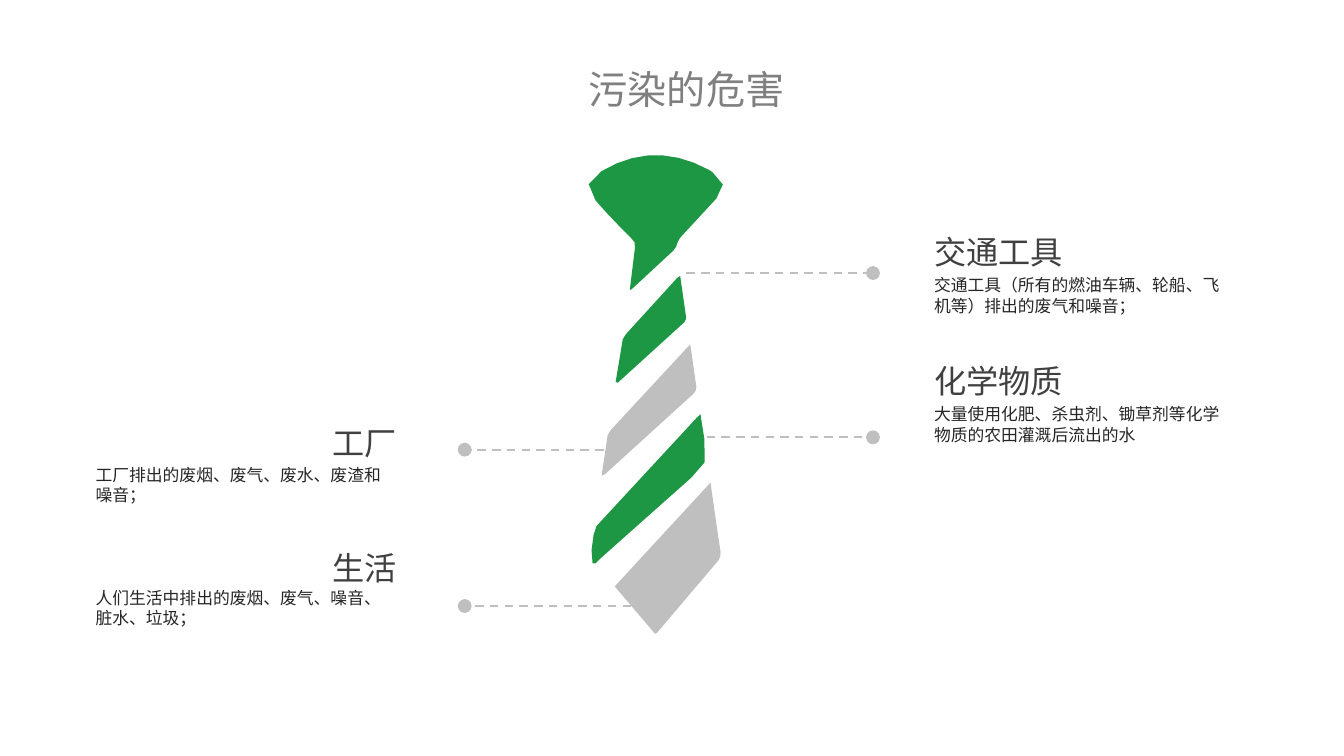
from math import dist

from lxml.etree import SubElement
from pptx import Presentation
from pptx.dml.color import RGBColor
from pptx.enum.dml import MSO_LINE_DASH_STYLE as Dash
from pptx.enum.shapes import MSO_CONNECTOR as Connector
from pptx.enum.text import MSO_ANCHOR as Anchor, MSO_AUTO_SIZE as AutoSize, PP_ALIGN as Align
from pptx.oxml.ns import qn
from pptx.util import Cm, Pt

FONT = "Noto Sans CJK SC"
GREEN = RGBColor(0x1D, 0x97, 0x44)
SILVER = RGBColor(0xBF, 0xBF, 0xBF)
TITLE_GRAY = RGBColor(0x80, 0x80, 0x80)
HEADING_GRAY = RGBColor(0x40, 0x40, 0x40)
BODY_GRAY = RGBColor(0x26, 0x26, 0x26)

UNITS_PER_CM = 100 / 2.54
CURVE_STEP = 15
HEADING_WIDTH, HEADING_HEIGHT = 5.92, 1.24
BODY_WIDTH, BODY_HEIGHT = 8.1, 1.27

TIE_PIECES = [
    (SILVER, [(70, 480), (30, 433), (125, 330), (131, 372), (135, 399),
              (135, 402, 135, 405, 133, 407), (72, 479)]),
    (GREEN, [(45, 139), (50, 98), (51, 93, 50, 90, 46, 87),
             (34, 75, 22, 63, 11, 50), (0, 37, 2, 30, 17, 21),
             (52, 0, 88, 0, 124, 20), (127, 22),
             (139, 31, 141, 37, 131, 48), (95, 87),
             (93, 89, 92, 93, 91, 96), (88, 100), (47, 138)]),
    (GREEN, [(8, 410), (7, 397), (9, 382), (12, 373), (111, 266), (115, 262),
             (119, 287), (119, 290), (126, 306, 117, 315, 106, 325),
             (16, 405), (11, 410)]),
    (SILVER, [(105, 193), (111, 235), (111, 237, 110, 241, 108, 242),
              (20, 322), (17, 323), (23, 283), (26, 278), (102, 196)]),
    (GREEN, [(31, 230), (38, 188), (41, 183), (92, 127), (95, 125),
             (101, 167), (99, 171), (33, 231)]),
]

LEADERS = [
    (15.21, 11.71, 11.33),
    (17.3, 22.0, 6.88),
    (17.81, 22.0, 11.02),
    (15.9, 11.71, 15.27),
]

CALLOUTS = [
    (23.29, 5.72, 1.09, Align.LEFT, "交通工具",
     "交通工具（所有的燃油车辆、轮船、飞机等）排出的废气和噪音；"),
    (23.29, 8.97, 1.09, Align.LEFT, "化学物质",
     "大量使用化肥、杀虫剂、锄草剂等化学物质的农田灌溉后流出的水"),
    (2.16, 10.54, 1.04, Align.RIGHT, "工厂",
     "工厂排出的废烟、废气、废水、废渣和噪音；"),
    (2.16, 13.69, 0.99, Align.RIGHT, "生活",
     "人们生活中排出的废烟、废气、噪音、脏水、垃圾；"),
]


def write_text(shape, text, size, color, align):
    """Fill a shape with one formatted run."""
    frame = shape.text_frame
    frame.word_wrap = True
    frame.auto_size = AutoSize.SHAPE_TO_FIT_TEXT
    frame.vertical_anchor = Anchor.TOP
    paragraph = frame.paragraphs[0]
    paragraph.alignment = align
    paragraph.line_spacing = 1.0
    run = paragraph.add_run()
    run.text = text
    run.font.size = Pt(size)
    run.font.name = FONT
    run.font.color.rgb = color
    SubElement(run.font._element, qn("a:ea"), typeface=FONT)


def add_title(slide, left, top, width, height):
    """Place the slide title in the given box."""
    title = slide.shapes.title
    title.left, title.top = Cm(left), Cm(top)
    title.width, title.height = Cm(width), Cm(height)
    write_text(title, "污染的危害", 28, TITLE_GRAY, Align.CENTER)


def trace_outline(segments):
    """List the points of corners (pairs) and cubic curves (two controls and an end)."""
    points = []
    for *controls, x3, y3 in segments:
        if not controls:
            points.append((x3, y3))
            continue
        x0, y0 = points[-1]
        x1, y1, x2, y2 = controls
        steps = max(2, round(dist((x0, y0), (x3, y3)) / CURVE_STEP))
        for step in range(1, steps + 1):
            t = step / steps
            a, b, c, d = (1 - t) ** 3, 3 * t * (1 - t) ** 2, 3 * t * t * (1 - t), t ** 3
            points.append((a * x0 + b * x1 + c * x2 + d * x3,
                           a * y0 + b * y1 + c * y2 + d * y3))
    return points


def add_tie(slide, left, top):
    """Draw the striped tie from its top left corner."""
    for color, segments in TIE_PIECES:
        points = [(Cm(x / UNITS_PER_CM), Cm(y / UNITS_PER_CM))
                  for x, y in trace_outline(segments)]
        builder = slide.shapes.build_freeform(*points[0])
        builder.add_line_segments(points[1:], close=True)
        shape = builder.convert_to_shape(Cm(left), Cm(top))
        shape.shadow.inherit = False
        shape.fill.solid()
        shape.fill.fore_color.rgb = color
        shape.line.fill.background()


def add_leader(slide, start, end, height):
    """Draw a dashed horizontal line that ends in a dot."""
    leader = slide.shapes.add_connector(
        Connector.STRAIGHT, Cm(start), Cm(height), Cm(end), Cm(height))
    leader.line.color.rgb = SILVER
    leader.line.width = Pt(1.5)
    leader.line.dash_style = Dash.DASH
    SubElement(leader.line._get_or_add_ln(), qn("a:tailEnd"),
               type="oval", w="lg", len="lg")
    SubElement(leader._element.spPr, qn("a:effectLst"))


def add_callout(slide, left, top, body_offset, align, heading, body):
    """Place a heading over its text, flush with the side it aligns to."""
    indent = BODY_WIDTH - HEADING_WIDTH if align == Align.RIGHT else 0
    heading_box = slide.shapes.add_textbox(
        Cm(left + indent), Cm(top), Cm(HEADING_WIDTH), Cm(HEADING_HEIGHT))
    write_text(heading_box, heading, 23, HEADING_GRAY, align)
    body_box = slide.shapes.add_textbox(
        Cm(left), Cm(top + body_offset), Cm(BODY_WIDTH), Cm(BODY_HEIGHT))
    write_text(body_box, body, 12, BODY_GRAY, Align.LEFT)


def main():
    """Build and save the slide."""
    presentation = Presentation()
    presentation.slide_width, presentation.slide_height = Cm(33.87), Cm(19.05)
    slide = presentation.slides.add_slide(presentation.slide_layouts[5])
    add_title(slide, 13.44, 1.52, 7.72, 1.45)
    add_tie(slide, 14.73, 3.78)
    for leader in LEADERS:
        add_leader(slide, *leader)
    for callout in CALLOUTS:
        add_callout(slide, *callout)
    presentation.save("out.pptx")


if __name__ == "__main__":
    main()
